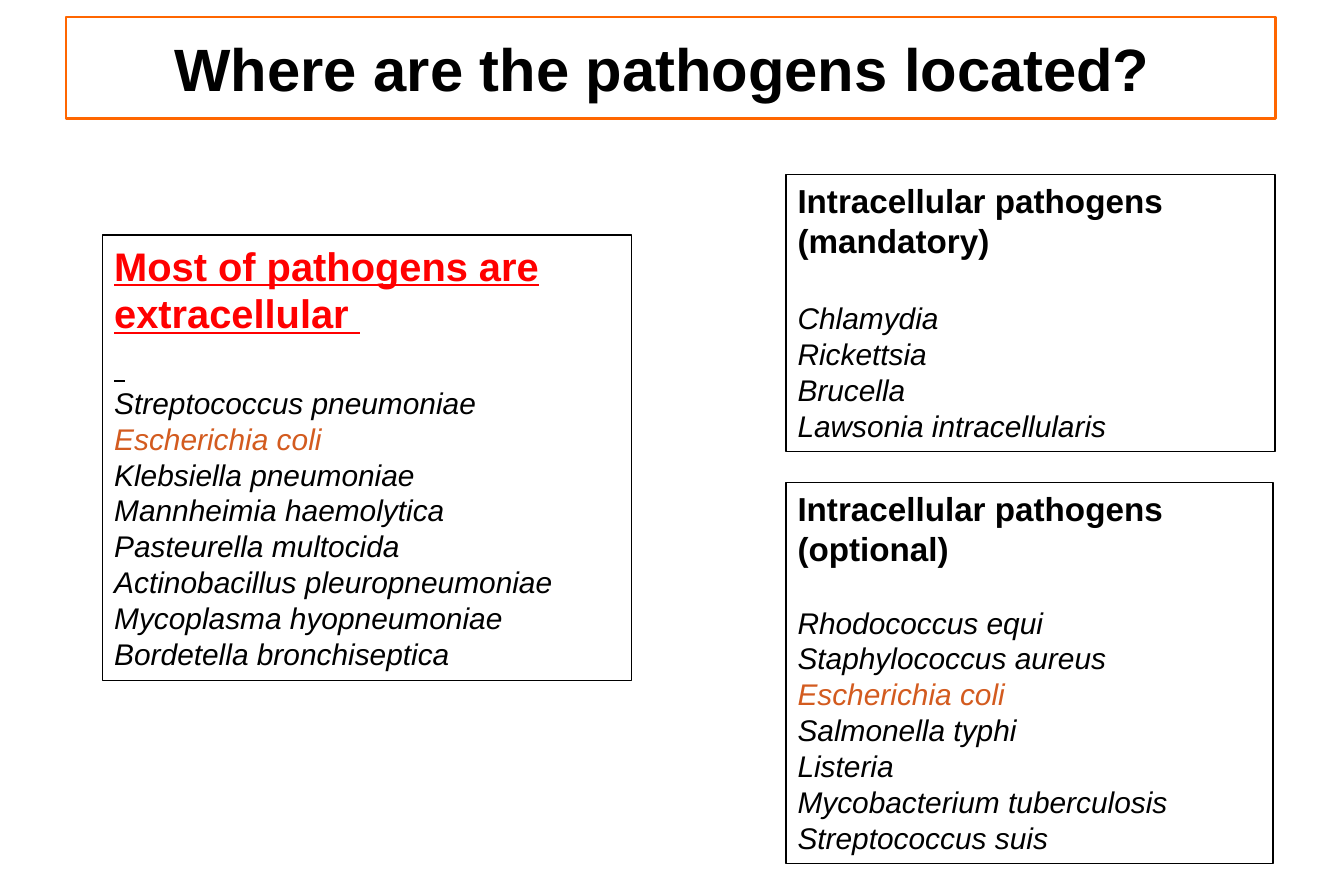
"""Build a slide that sorts pathogens by where they are located."""
from pptx import Presentation
from pptx.dml.color import RGBColor
from pptx.enum.text import MSO_ANCHOR, MSO_AUTO_SIZE, PP_ALIGN
from pptx.util import Cm, Pt

TITLE = "Where are the pathogens located? "
TITLE_BOX = (1.4, 0.36, 25.73, 2.16)
GROUPS = [
    {"box": (2.18, 5, 11.25, 9.47), "style": "key", "gap": 0,
     "heads": ["Most of pathogens are extracellular ", " "],
     "items": ["Streptococcus pneumoniae", "Escherichia coli", "Klebsiella pneumoniae",
               "Mannheimia haemolytica", "Pasteurella multocida",
               "Actinobacillus pleuropneumoniae", "Mycoplasma hyopneumoniae",
               "Bordetella bronchiseptica"]},
    {"box": (16.71, 10.26, 10.36, 8.1), "style": "head", "gap": 21.6,
     "heads": ["Intracellular pathogens (optional)"],
     "items": ["Rhodococcus equi", "Staphylococcus aureus", "Escherichia coli",
               "Salmonella typhi", "Listeria", "Mycobacterium tuberculosis",
               "Streptococcus suis"]},
    {"box": (16.71, 3.71, 10.41, 5.89), "style": "head", "gap": 24,
     "heads": ["Intracellular pathogens (mandatory)"],
     "items": ["Chlamydia", "Rickettsia", "Brucella", "Lawsonia intracellularis"]},
]
BOTH_PLACES = "Escherichia coli"

THEME = {
    "font": "Arial", "leading": 1.2,
    "black": RGBColor(0, 0, 0), "white": RGBColor(255, 255, 255),
    "red": RGBColor(255, 0, 0), "orange": RGBColor(0xFF, 0x66, 0),
    "rust": RGBColor(0xD3, 0x5B, 0x1F),
    "title": {"size": Pt(36), "bold": True},
    "key": {"size": Pt(24), "bold": True, "underline": True},
    "head": {"size": Pt(20), "bold": True},
    "item": {"size": Pt(18), "italic": True},
}


def add_box(slide, box, color, width, inset):
    sp = slide.shapes.add_textbox(*map(Cm, box))
    sp.line.color.rgb = THEME[color]
    sp.line.width = Pt(width)
    tf = sp.text_frame
    frame = {"word_wrap": True, "auto_size": MSO_AUTO_SIZE.NONE,
             "margin_left": Cm(inset[0]), "margin_right": Cm(inset[0]),
             "margin_top": Cm(inset[1]), "margin_bottom": Cm(inset[1])}
    for name, value in frame.items():
        setattr(tf, name, value)
    return sp


def write(p, text, style, color="black", gap=0):
    r = p.add_run()
    r.text = text
    r.font.name = THEME["font"]
    r.font.color.rgb = THEME[color]
    for name, value in THEME[style].items():
        setattr(r.font, name, value)
    p.line_spacing = Pt(THEME[style]["size"].pt * THEME["leading"])
    p.space_after = Pt(gap)


def add_group(slide, group):
    lines = []
    for text in group["heads"]:
        red = group["style"] == "key" and text.strip()
        lines.append((text, group["style"], "red" if red else "black", group["gap"]))
    for text in group["items"]:
        lines.append((text, "item", "rust" if text == BOTH_PLACES else "black"))
    tf = add_box(slide, group["box"], "black", 1, (0.25, 0.13)).text_frame
    for i, line in enumerate(lines):
        write(tf.add_paragraph() if i else tf.paragraphs[0], *line)


def main():
    prs = Presentation()
    prs.slide_width, prs.slide_height = Cm(28.58), Cm(19.05)
    slide = prs.slides.add_slide(prs.slide_layouts[6])
    sp = add_box(slide, TITLE_BOX, "orange", 1.5, (0.2, 0.2))
    sp.fill.solid()
    sp.fill.fore_color.rgb = THEME["white"]
    sp.text_frame.vertical_anchor = MSO_ANCHOR.MIDDLE
    p = sp.text_frame.paragraphs[0]
    p.alignment = PP_ALIGN.CENTER
    write(p, TITLE, "title")
    for group in GROUPS:
        add_group(slide, group)
    prs.save("out.pptx")


if __name__ == "__main__":
    main()
